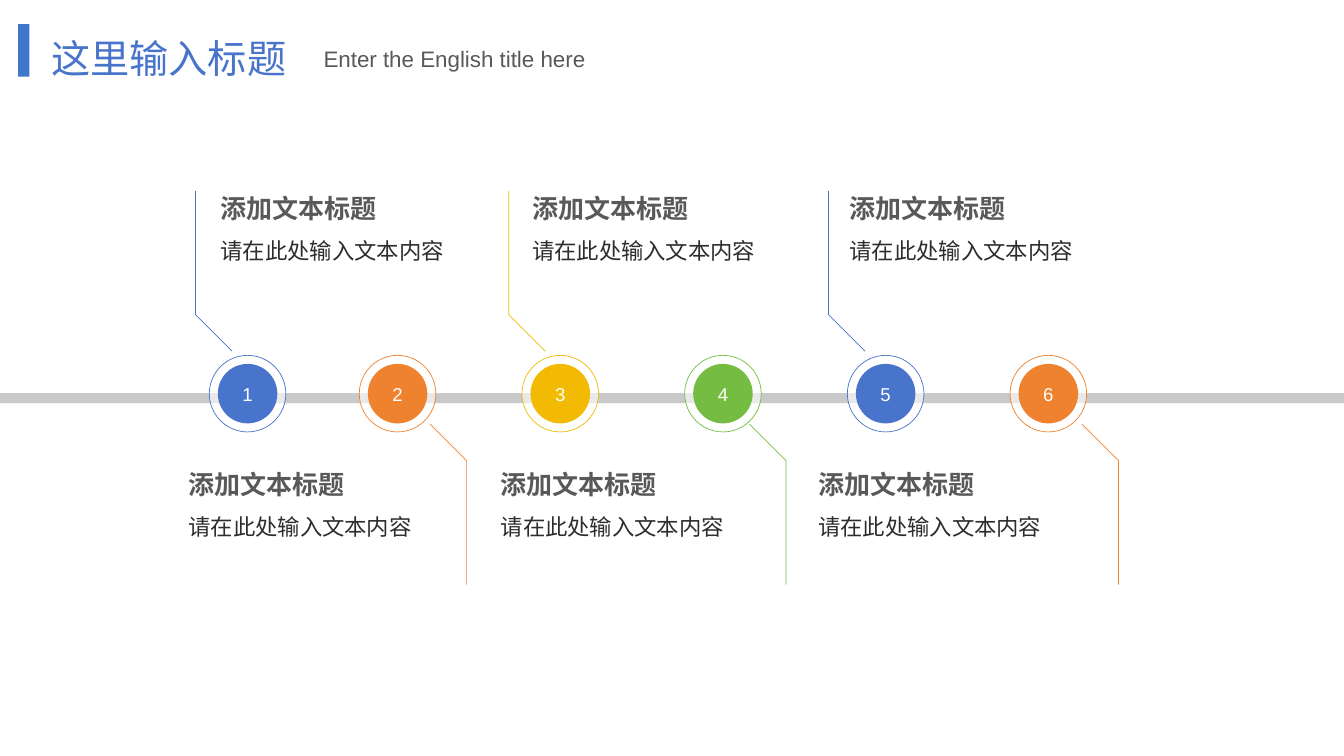
from lxml.etree import SubElement
from pptx import Presentation
from pptx.dml.color import RGBColor
from pptx.enum.shapes import MSO_SHAPE as Preset
from pptx.enum.text import MSO_ANCHOR as Anchor, MSO_AUTO_SIZE as AutoSize, PP_ALIGN as Align
from pptx.oxml.ns import qn
from pptx.util import Cm, Pt

BLUE = RGBColor(0x48, 0x74, 0xCB)
ORANGE = RGBColor(0xEE, 0x82, 0x2F)
YELLOW = RGBColor(0xF2, 0xBA, 0x02)
GREEN = RGBColor(0x75, 0xBD, 0x42)
NAVY = RGBColor(0x00, 0x4A, 0xBA)
GREY = RGBColor(0xA6, 0xA6, 0xA6)
HEADING = RGBColor(0x59, 0x59, 0x59)
BODY = RGBColor(0x2D, 0x2D, 0x2D)
WHITE = RGBColor(0xFF, 0xFF, 0xFF)

LATIN, CJK = "Arial", "Noto Sans CJK SC"
WIDTH, HEIGHT = 33.87, 19.05
RING, DISC = 1.93, 1.5
STEM, SLANT = 3.12, 0.92

TITLE_FONT = {"size": Pt(28), "name": CJK, "bold": False}
SUBTITLE_FONT = {"size": Pt(16), "name": LATIN, "bold": False}
NUMBER_FONT = {"size": Pt(13.3), "name": LATIN}
CAPTION = [
    ("添加文本标题", {"size": Pt(18.6), "name": LATIN, "bold": True}, HEADING),
    ("请在此处输入文本内容", {"size": Pt(16), "name": LATIN, "bold": False}, BODY),
]
STEP_COLOURS = [BLUE, ORANGE, YELLOW, GREEN, BLUE, ORANGE]
STEM_LEFTS = [4.93, 11.76, 12.82, 19.81, 20.88, 28.19]
CAPTION_LEFTS = [5.31, 4.5, 13.16, 12.37, 21.16, 20.37]


def apply(target, values):
    """Set every attribute in values on the target."""
    for attribute, value in values.items():
        setattr(target, attribute, value)


def write(paragraph, text, font, colour, **layout):
    """Write one formatted run into a paragraph."""
    apply(paragraph, layout)
    run = paragraph.add_run()
    run.text = text
    apply(run.font, font)
    run.font.color.rgb = colour
    SubElement(run.font._element, qn("a:ea"), typeface=CJK)


def add_block(slide, preset, box, fill, opacity=100, outline=None):
    """Add a filled preset shape in a box given in centimetres."""
    block = slide.shapes.add_shape(preset, *map(Cm, box))
    block.shadow.inherit = False
    block.fill.solid()
    block.fill.fore_color.rgb = fill
    if opacity < 100:
        colour = block.fill._xPr.find(qn("a:solidFill"))[0]
        SubElement(colour, qn("a:alpha"), val=str(opacity * 1000))
    if outline is None:
        block.line.fill.background()
    else:
        block.line.color.rgb = outline
        block.line.width = Pt(0.5)
    return block


def add_header(slide, left, top):
    """Place the accent bar, the title and the English subtitle."""
    add_block(slide, Preset.RECTANGLE, (left, top, 0.28, 1.32), NAVY, 75)
    title, subtitle = slide.placeholders
    parts = [
        (title, (left + 0.58, top - 0.76, 10.54, 2.34), "这里输入标题", TITLE_FONT, BLUE, 1.75),
        (subtitle, (left + 7.44, top + 0.41, 13.94, 0.94), "Enter the English title here",
         SUBTITLE_FONT, HEADING, 1.0),
    ]
    for holder, box, text, font, colour, spacing in parts:
        apply(holder, dict(zip(("left", "top", "width", "height"), map(Cm, box))))
        frame = holder.text_frame
        apply(frame, {"auto_size": AutoSize.NONE, "vertical_anchor": Anchor.TOP, "word_wrap": True})
        write(frame.paragraphs[0], text, font, colour,
              alignment=Align.LEFT, line_spacing=spacing, space_before=Pt(0))


def add_marker(slide, centre_x, centre_y, number, colour):
    """Draw a ring around a numbered disc."""
    def around(size):
        return centre_x - size / 2, centre_y - size / 2, size, size

    add_block(slide, Preset.OVAL, around(RING), WHITE, 60, colour)
    disc = add_block(slide, Preset.OVAL, around(DISC), colour)
    apply(disc.text_frame, {"vertical_anchor": Anchor.MIDDLE,
                            "margin_left": Cm(0.33), "margin_right": Cm(0.33),
                            "margin_top": Cm(0.18), "margin_bottom": Cm(0.18)})
    write(disc.text_frame.paragraphs[0], str(number), NUMBER_FONT, WHITE, alignment=Align.CENTER)


def add_leader(slide, left, outer_y, direction, colour):
    """Draw a vertical stem from its outer end, bending towards its marker."""
    bend_y = outer_y + direction * STEM
    tip = left + direction * SLANT, bend_y + direction * SLANT
    outline = slide.shapes.build_freeform(Cm(left), Cm(outer_y))
    outline.add_line_segments([(Cm(left), Cm(bend_y)), tuple(map(Cm, tip))], close=False)
    leader = outline.convert_to_shape()
    leader.shadow.inherit = False
    leader.fill.background()
    leader.line.color.rgb = colour
    leader.line.width = Pt(0.5)


def add_caption(slide, left, top):
    """Place a heading with its body line."""
    frame = slide.shapes.add_textbox(Cm(left), Cm(top), Cm(7.82), Cm(2.46)).text_frame
    frame.word_wrap = True
    for index, (text, font, colour) in enumerate(CAPTION):
        paragraph = frame.add_paragraph() if index else frame.paragraphs[0]
        write(paragraph, text, font, colour, line_spacing=1.5)


def add_timeline(slide, axis_y):
    """Place the axis and six steps that alternate above and below it."""
    add_block(slide, Preset.RECTANGLE, (0, axis_y, WIDTH, 0.25), GREY, 60)
    steps = zip(STEP_COLOURS, STEM_LEFTS, CAPTION_LEFTS)
    for index, (colour, stem_left, caption_left) in enumerate(steps):
        above = index % 2 == 0
        centre_x = 10.02 + 4.1 * (index - 1) if index else 6.24
        add_marker(slide, centre_x, axis_y + 0.01, index + 1, colour)
        add_leader(slide, stem_left, axis_y + (-5.1 if above else 4.82), 1 if above else -1, colour)
        add_caption(slide, caption_left, axis_y + (-5.57 if above else 1.37))


def main():
    """Build and save the slide."""
    deck = Presentation()
    deck.slide_width, deck.slide_height = Cm(WIDTH), Cm(HEIGHT)
    slide = deck.slides.add_slide(deck.slide_layouts[0])
    add_header(slide, 0.46, 0.61)
    add_timeline(slide, 9.91)
    deck.save("out.pptx")


if __name__ == "__main__":
    main()
